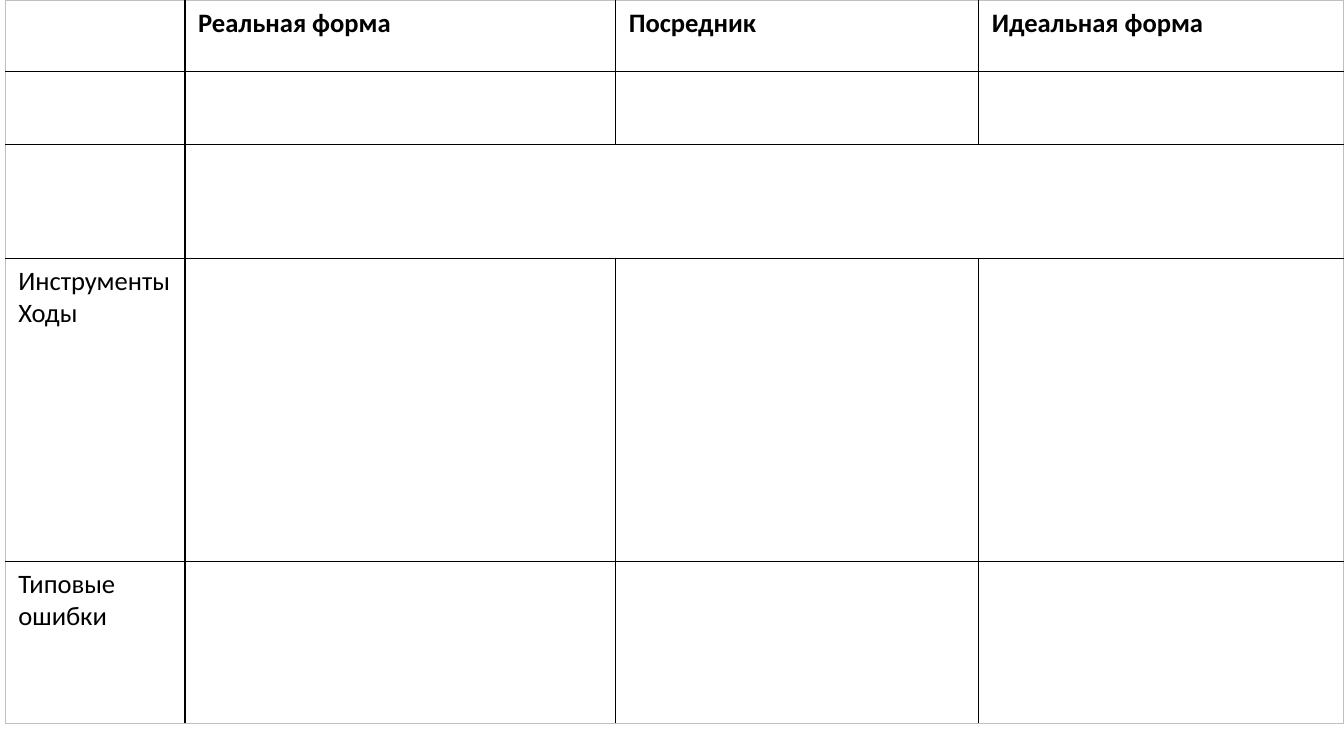
from lxml.etree import SubElement
from pptx import Presentation
from pptx.dml.color import RGBColor
from pptx.oxml.ns import qn
from pptx.util import Pt

BLACK = RGBColor(0x00, 0x00, 0x00)
GREY = RGBColor(0xBF, 0xBF, 0xBF)

COLUMN_WIDTHS = [128.3, 307.7, 259.3, 260.7]
ROW_HEIGHTS = [51, 52.5, 81, 216.5, 115.6]
HEADINGS = ["Реальная форма", "Посредник", "Идеальная форма"]
LABELS = {
    (0, 1): HEADINGS[:1],
    (0, 2): HEADINGS[1:2],
    (0, 3): HEADINGS[2:],
    (3, 0): ["Инструменты", "Ходы"],
    (4, 0): ["Типовые ошибки"],
}
MERGED_ROW = 2


def add_border(cell, side, is_outer):
    """Draw one side of a cell: grey hairline outside, black line inside."""
    width, color = (0.5, GREY) if is_outer else (1, BLACK)
    line = SubElement(cell._tc.get_or_add_tcPr(), qn(f"a:{side}"), w=str(Pt(width)))
    fill = SubElement(line, qn("a:solidFill"))
    SubElement(fill, qn("a:srgbClr"), val=str(color))


deck = Presentation()
deck.slide_width, deck.slide_height = Pt(960), Pt(540)
page = deck.slides.add_slide(deck.slide_layouts[6])

row_count, column_count = len(ROW_HEIGHTS), len(COLUMN_WIDTHS)
table = page.shapes.add_table(
    row_count, column_count, Pt(3.8), Pt(0), Pt(sum(COLUMN_WIDTHS)), Pt(sum(ROW_HEIGHTS))
).table
table.first_row = False
table.horz_banding = False
for column, width in zip(table.columns, COLUMN_WIDTHS):
    column.width = Pt(width)
for row, height in zip(table.rows, ROW_HEIGHTS):
    row.height = Pt(height)

last_row, last_column = row_count - 1, column_count - 1
table.cell(MERGED_ROW, 1).merge(table.cell(MERGED_ROW, last_column))

for r in range(row_count):
    for c in range(column_count):
        cell = table.cell(r, c)
        if not cell.is_spanned:
            add_border(cell, "lnL", c == 0)
        if not cell.is_spanned or c == last_column:
            add_border(cell, "lnR", c == last_column or cell.is_merge_origin)
        add_border(cell, "lnT", r == 0)
        add_border(cell, "lnB", r == last_row)
        cell.fill.background()
        cell.margin_left = cell.margin_right = Pt(9.4)
        cell.margin_top = cell.margin_bottom = Pt(5)

        for i, text in enumerate(LABELS.get((r, c), [])):
            frame = cell.text_frame
            para = frame.add_paragraph() if i else frame.paragraphs[0]
            span = para.add_run()
            span.text = text
            span.font.name = "Calibri"
            span.font.size = Pt(19)
            span.font.bold = r == 0
            span.font.color.rgb = BLACK

deck.save("out.pptx")
